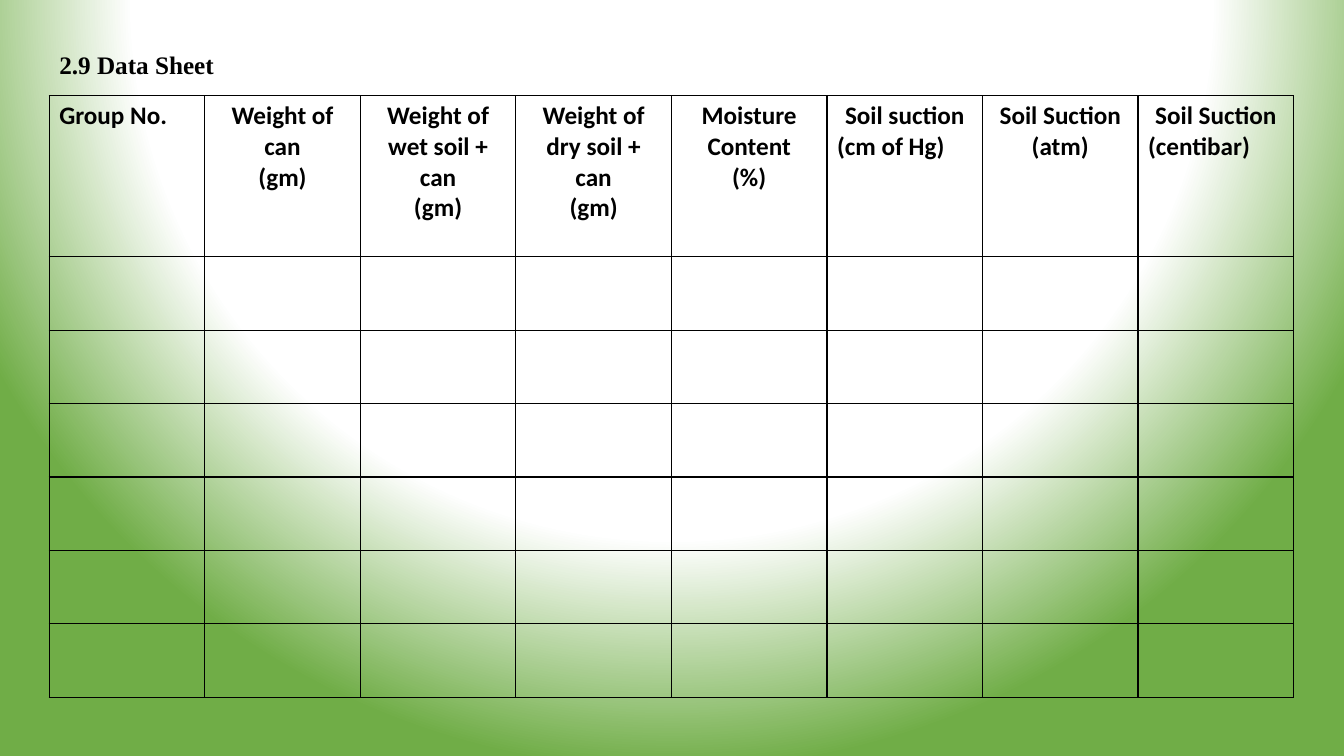
"""Builds the soil moisture data sheet slide with an empty table to fill in."""
from dataclasses import dataclass

from pptx import Presentation
from pptx import oxml
from pptx import util as u
from pptx.dml.color import RGBColor
from pptx.enum import text
from pptx.oxml import ns


@dataclass(frozen=True)
class Theme:
    ink: str = "000000"
    center: str = "FFFFFF"
    edge: str = "70AD47"
    title_font: str = "Times New Roman"
    table_font: str = "Calibri"
    size: int = 18
    border: int = 1


theme = Theme()
LEFT, CENTER = text.PP_ALIGN.LEFT, text.PP_ALIGN.CENTER
HEADINGS = [
    [("Group No.", LEFT)],
    [("Weight of can", CENTER), ("(gm)", CENTER)],
    [("Weight of wet soil + can", CENTER), ("(gm)", CENTER)],
    [("Weight of dry soil + can", CENTER), ("(gm)", CENTER)],
    [("Moisture", CENTER), ("Content", CENTER), ("(%)", CENTER)],
    [("Soil suction", CENTER), ("(cm of Hg)", LEFT)],
    [("Soil Suction", CENTER), ("(atm)", CENTER)],
    [("Soil Suction", CENTER), ("(centibar)", LEFT)],
]
EMPTY_ROWS = 6
COLUMN_WIDTH, HEADER_HEIGHT, ROW_HEIGHT = u.Cm(3.92), u.Cm(4.06), u.Cm(1.85)


def write(para, words, align, font):
    para.text = words
    para.alignment = align
    for span in para.runs:
        span.font.name = font
        span.font.size = u.Pt(theme.size)
        span.font.bold = True
        span.font.color.rgb = RGBColor.from_string(theme.ink)


def add_borders(cell):
    properties = cell._tc.get_or_add_tcPr()
    for index, side in enumerate("LRTB"):
        properties.insert(index, oxml.parse_xml(
            f'<a:ln{side} {ns.nsdecls("a")} w="{u.Pt(theme.border)}">'
            f'<a:solidFill><a:srgbClr val="{theme.ink}"/></a:solidFill></a:ln{side}>'))


deck = Presentation()
deck.slide_width, deck.slide_height = u.Cm(33.87), u.Cm(19.05)
page = deck.slides.add_slide(deck.slide_layouts[5])

page.background.fill.solid()
background = page.element.find(".//" + ns.qn("p:bgPr"))
stops = "".join(
    f'<a:gs pos="{percent * 1000}"><a:srgbClr val="{color}"/></a:gs>'
    for percent, color in [(56, theme.center), (70, theme.center), (100, theme.edge)])
background.replace(background[0], oxml.parse_xml(
    f'<a:gradFill {ns.nsdecls("a")} rotWithShape="1"><a:gsLst>{stops}</a:gsLst>'
    '<a:path path="circle"><a:fillToRect l="50000" t="-80000" r="50000" b="180000"/>'
    '</a:path></a:gradFill>'))

title = page.shapes.title
title.left, title.top, title.width, title.height = u.Cm(1.24), u.Cm(1.12), u.Cm(16.94), u.Cm(1.02)
frame = title.text_frame
frame.word_wrap = True
frame.auto_size = text.MSO_AUTO_SIZE.NONE
frame.vertical_anchor = text.MSO_ANCHOR.TOP
write(frame.paragraphs[0], "2.9 Data Sheet", LEFT, theme.title_font)

table = page.shapes.add_table(
    EMPTY_ROWS + 1, len(HEADINGS), u.Cm(1.24), u.Cm(2.41),
    COLUMN_WIDTH * len(HEADINGS), HEADER_HEIGHT + ROW_HEIGHT * EMPTY_ROWS).table
table.first_row = table.horz_banding = False
for column in table.columns:
    column.width = COLUMN_WIDTH
for number, row in enumerate(table.rows):
    row.height = ROW_HEIGHT if number else HEADER_HEIGHT
    for cell in row.cells:
        cell.fill.background()
        add_borders(cell)

for cell, lines in zip(table.rows[0].cells, HEADINGS):
    frame = cell.text_frame
    for number, (words, align) in enumerate(lines):
        para = frame.add_paragraph() if number else frame.paragraphs[0]
        write(para, words, align, theme.table_font)

deck.save("out.pptx")
